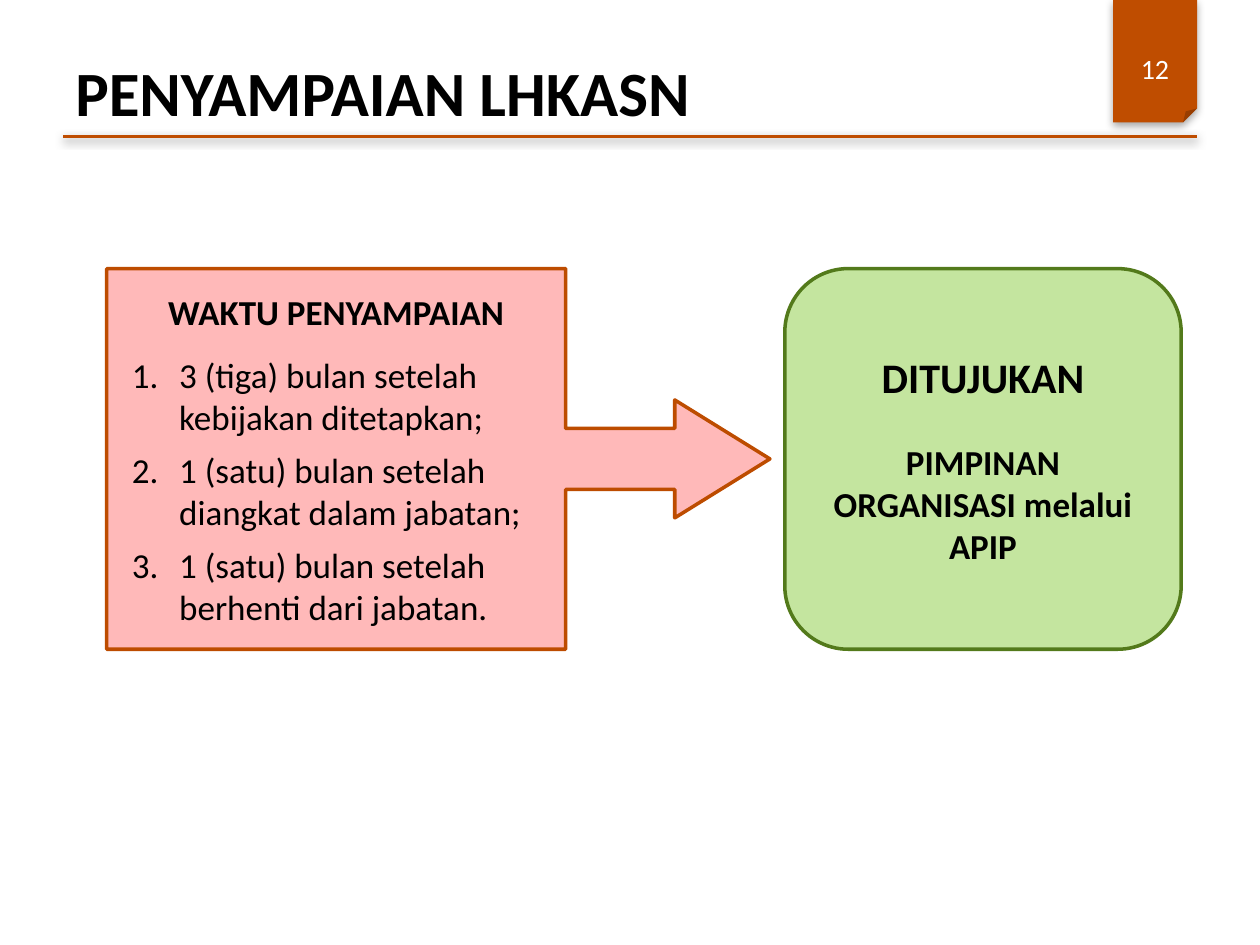
from lxml import etree
from pptx import Presentation
from pptx.dml.color import RGBColor
from pptx.enum.shapes import MSO_CONNECTOR, MSO_SHAPE
from pptx.enum.text import MSO_ANCHOR, PP_ALIGN
from pptx.oxml.ns import qn
from pptx.util import Pt

FOLD = MSO_SHAPE.FOLDED_CORNER
CALLOUT = MSO_SHAPE.RIGHT_ARROW_CALLOUT
ROUND = MSO_SHAPE.ROUNDED_RECTANGLE
STRAIGHT = MSO_CONNECTOR.STRAIGHT
MIDDLE = MSO_ANCHOR.MIDDLE
LEFT, CENTER = PP_ALIGN.LEFT, PP_ALIGN.CENTER

BLACK = RGBColor(0, 0, 0)
WHITE = RGBColor(255, 255, 255)
ORANGE = RGBColor(0xBF, 0x4D, 0x00)
RUST = RGBColor(0xBD, 0x4C, 0x00)
PINK = RGBColor(0xFF, 0xB9, 0xB9)
LIME = RGBColor(0xC4, 0xE5, 0x9F)
GREEN = RGBColor(0x53, 0x7A, 0x1B)

TIMES = [
    "3 (tiga) bulan setelah kebijakan ditetapkan;",
    "1 (satu) bulan setelah diangkat dalam jabatan;",
    "1 (satu) bulan setelah berhenti dari jabatan.",
]


def add_shadow(item, dist, alpha):
    """Drop a soft black shadow straight down; call after fill and line."""
    props = item._element.spPr
    effects = props.find(qn("a:effectLst"))
    if effects is None:
        effects = etree.SubElement(props, qn("a:effectLst"))
    outer = etree.SubElement(effects, qn("a:outerShdw"), blurRad=str(Pt(5)),
                             dist=str(Pt(dist)), dir="5400000", rotWithShape="0")
    color = etree.SubElement(outer, qn("a:srgbClr"), val="000000")
    etree.SubElement(color, qn("a:alpha"), val=str(alpha * 1000))


def add_block(slide, kind, box, fill, line=None):
    shape = slide.shapes.add_shape(kind, *map(Pt, box))
    shape.shadow.inherit = False
    shape.fill.solid()
    shape.fill.fore_color.rgb = fill
    if line is None:
        shape.line.fill.background()
    else:
        shape.line.color.rgb = line
        shape.line.width = Pt(2)
    return shape


def adjust(shape, values):
    """Set adj1, adj2 and so on in XML, for presets without listed adjustments."""
    guides = shape._element.spPr.find(qn("a:prstGeom")).find(qn("a:avLst"))
    for guide in list(guides):
        guides.remove(guide)
    for i, value in enumerate(values, 1):
        etree.SubElement(guides, qn("a:gd"), name=f"adj{i}",
                         fmla=f"val {round(value * 100000)}")


def write(shape, parts):
    """Fill a shape with (text, size, bold, color, align, space after) parts."""
    frame = shape.text_frame
    frame.word_wrap = True
    frame.vertical_anchor = MIDDLE
    for i, (text, size, bold, color, align, after) in enumerate(parts):
        para = frame.add_paragraph() if i else frame.paragraphs[0]
        para.text = text
        para.alignment = align
        para.space_after = Pt(after)
        font = para.font
        font.name, font.size, font.bold = "Calibri", Pt(size), bold
        font.color.rgb = color
    return frame


def number(para, indent):
    props = para._p.get_or_add_pPr()
    props.set("marL", str(Pt(indent)))
    props.set("indent", str(-Pt(indent)))
    mark = etree.Element(qn("a:buAutoNum"), type="arabicPeriod")
    props.find(qn("a:spcAft")).addnext(mark)


def add_header(slide, box, title, page):
    x, y, w, h = box
    tab = 48
    edge = x + w - tab
    ribbon = add_block(slide, FOLD, (edge, y, tab, 70), ORANGE)
    add_shadow(ribbon, 1.8, 35)
    rule = slide.shapes.add_connector(STRAIGHT, Pt(x), Pt(y + h), Pt(x + w), Pt(y + h))
    rule.line.color.rgb = ORANGE
    rule.line.width = Pt(2)
    add_shadow(rule, 1.6, 38)
    head = slide.shapes.add_textbox(Pt(x), Pt(y + 22), Pt(w), Pt(60))
    write(head, [(title, 36, True, BLACK, LEFT, 0)])
    label = slide.shapes.add_textbox(Pt(edge), Pt(y + 24), Pt(tab), Pt(30))
    write(label, [(page, 16, False, WHITE, CENTER, 0)])


def add_times(slide, box):
    shape = add_block(slide, CALLOUT, box, PINK, RUST)
    adjust(shape, [0.16, 0.155, 0.25, 0.692])
    frame = write(shape, [("WAKTU PENYAMPAIAN", 20, True, BLACK, CENTER, 12)]
                  + [(text, 20, False, BLACK, LEFT, 6) for text in TIMES])
    frame.margin_left = frame.margin_right = Pt(14.4)
    for para in frame.paragraphs[1:]:
        number(para, 27)


def add_target(slide, box):
    shape = add_block(slide, ROUND, box, LIME, GREEN)
    write(shape, [
        ("DITUJUKAN", 24, True, BLACK, CENTER, 22),
        ("PIMPINAN ORGANISASI melalui APIP", 20, True, BLACK, CENTER, 0),
    ])


def main():
    deck = Presentation()
    deck.slide_width, deck.slide_height = Pt(720), Pt(540)
    slide = deck.slides.add_slide(deck.slide_layouts[6])
    add_header(slide, (36, 0, 648, 78), "PENYAMPAIAN LHKASN", "12")
    top, height = 153.5, 217.5
    add_times(slide, (61, top, 379, height))
    add_target(slide, (448.5, top, 226.5, height))
    deck.save("out.pptx")


if __name__ == "__main__":
    main()
